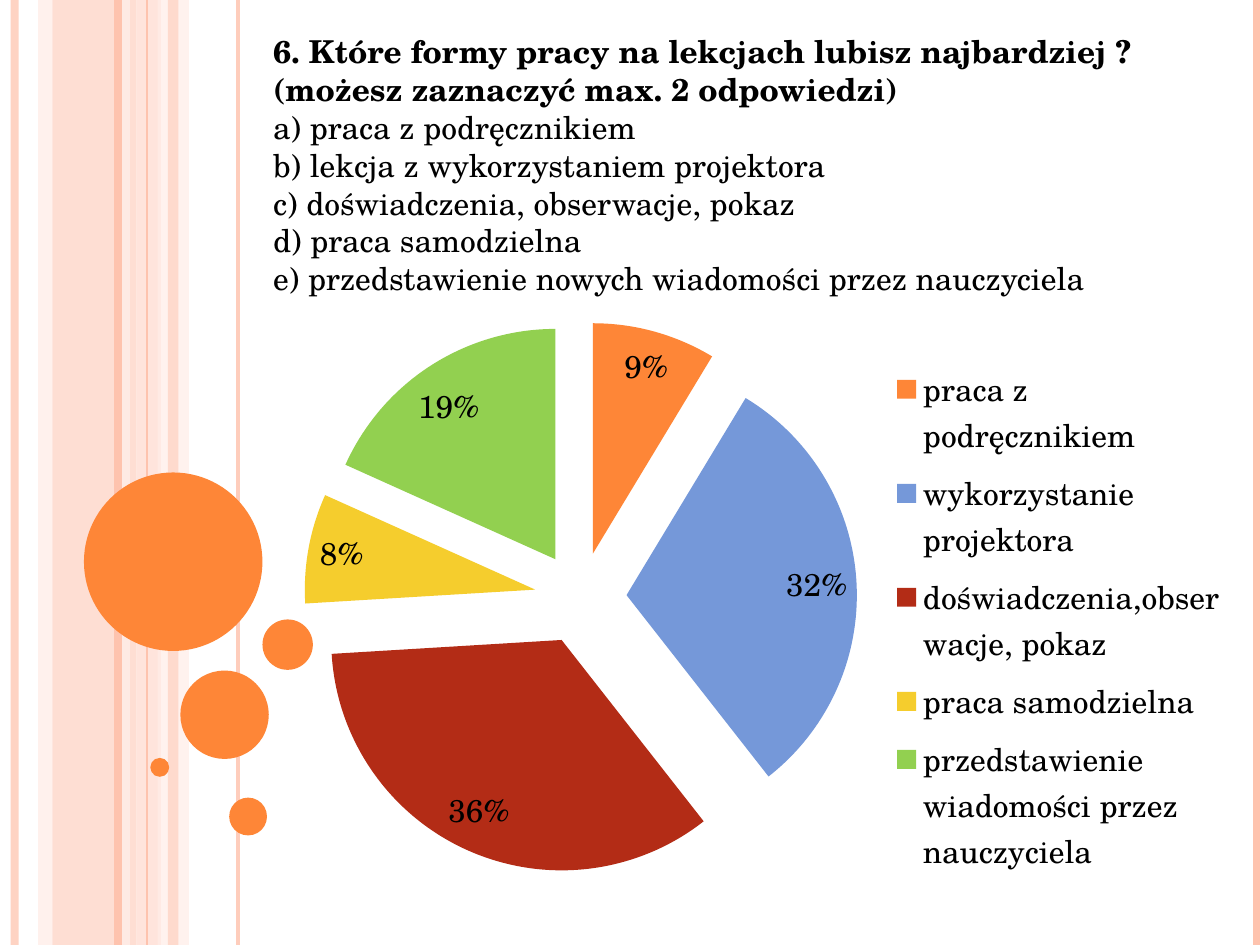
from dataclasses import dataclass

from lxml import etree
from pptx import Presentation
from pptx import util as u
from pptx.chart.data import CategoryChartData
from pptx.dml.color import RGBColor
from pptx.enum import chart as charts, shapes, text
from pptx.oxml.ns import qn

COLORS = {
    "peach": "FEC3AE", "blush": "FFD9CE", "pale": "FFEDE8", "orange": "FE8637",
    "blue": "7598D9", "red": "B32C16", "yellow": "F5CD2D", "green": "92D050",
    "black": "000000",
}
FONT = "TeX Gyre Schola"
TEXT_SIZE = u.Pt(18)
SLIDE_WIDTH, SLIDE_HEIGHT = 720, 540


@dataclass(frozen=True)
class Band:
    left: float
    width: float
    color: str
    opacity: int


@dataclass(frozen=True)
class Stripe:
    x: float
    weight: float
    color: str
    opacity: int = 100


@dataclass(frozen=True)
class Bubble:
    left: float
    top: float
    diameter: float


@dataclass(frozen=True)
class Slice:
    label: str
    share: float
    color: str


BANDS = [
    Band(30, 48, "peach", 54),
    Band(21.8, 8.2, "blush", 36),
    Band(78, 14, "blush", 70),
    Band(90, 18, "pale", 71),
]
STRIPES = [
    Stripe(8.4, 4.5, "peach", 73),
    Stripe(72, 4.5, "pale", 83),
    Stripe(67.2, 4.5, "peach"),
    Stripe(136, 2.25, "peach", 82),
    Stripe(84, 0.75, "peach"),
    Stripe(718, 4.5, "peach"),
]
FRONT_BAND = Band(96, 6, "peach", 51)
BUBBLES = [
    Bubble(48, 270, 102),
    Bubble(103.1, 383.2, 50.5),
    Bubble(85.9, 433.1, 10.8),
    Bubble(131, 455.8, 21.6),
    Bubble(150, 354, 28.8),
]
SLICES = [
    Slice("praca z podręcznikiem", 0.09, "orange"),
    Slice("wykorzystanie projektora", 0.32, "blue"),
    Slice("doświadczenia,obserwacje, pokaz", 0.36, "red"),
    Slice("praca samodzielna", 0.08, "yellow"),
    Slice("przedstawienie wiadomości przez nauczyciela", 0.19, "green"),
]
QUESTION = ("6. Które formy pracy na lekcjach lubisz najbardziej ?\n"
            "(możesz zaznaczyć max. 2 odpowiedzi)")
ANSWERS = [
    "a) praca z podręcznikiem",
    "b) lekcja z wykorzystaniem projektora",
    "c) doświadczenia, obserwacje, pokaz",
    "d) praca samodzielna",
    "e) przedstawienie nowych wiadomości przez nauczyciela",
]
PLOT_LAYOUT = {"layoutTarget": "inner", "xMode": "edge", "yMode": "edge",
               "x": 0.067, "y": 0.091, "w": 0.552, "h": 0.851}
LEGEND_LAYOUT = {"xMode": "edge", "yMode": "edge",
                 "x": 0.65, "y": 0.15, "w": 0.34, "h": 0.8}
EXPLOSION = 20


def rgb(name: str) -> RGBColor:
    return RGBColor.from_string(COLORS[name])


def set_opacity(shape, opacity: int) -> None:
    if opacity < 100:
        color = shape._element.spPr.find(".//" + qn("a:srgbClr"))
        etree.SubElement(color, qn("a:alpha"), val=str(opacity * 1000))


def style_font(font, bold: bool = False) -> None:
    font.name = FONT
    font.size = TEXT_SIZE
    font.bold = bold
    font.color.rgb = rgb("black")


def draw_filled(slide, kind, left: float, top: float, width: float, height: float,
                color: str, opacity: int = 100) -> None:
    shape = slide.shapes.add_shape(kind, u.Pt(left), u.Pt(top), u.Pt(width), u.Pt(height))
    shape.shadow.inherit = False
    shape.fill.solid()
    shape.fill.fore_color.rgb = rgb(color)
    shape.line.fill.background()
    set_opacity(shape, opacity)


def draw_band(slide, band: Band) -> None:
    draw_filled(slide, shapes.MSO_SHAPE.RECTANGLE, band.left, 0, band.width,
                SLIDE_HEIGHT, band.color, band.opacity)


def draw_stripe(slide, stripe: Stripe) -> None:
    connector = slide.shapes.add_connector(
        shapes.MSO_CONNECTOR.STRAIGHT, u.Pt(stripe.x), u.Pt(0),
        u.Pt(stripe.x), u.Pt(SLIDE_HEIGHT))
    connector.line.color.rgb = rgb(stripe.color)
    connector.line.width = u.Pt(stripe.weight)
    set_opacity(connector, stripe.opacity)
    etree.SubElement(connector._element.spPr, qn("a:effectLst"))


def draw_bubble(slide, bubble: Bubble) -> None:
    draw_filled(slide, shapes.MSO_SHAPE.OVAL, bubble.left, bubble.top,
                bubble.diameter, bubble.diameter, "orange")


def draw_question(slide) -> None:
    box = slide.shapes.add_textbox(u.Pt(149), u.Pt(15), u.Pt(561.6), u.Pt(181.4))
    frame = box.text_frame
    frame.word_wrap = True
    frame.vertical_anchor = text.MSO_ANCHOR.TOP
    for index, line in enumerate([QUESTION, *ANSWERS]):
        paragraph = frame.add_paragraph() if index else frame.paragraphs[0]
        paragraph.text = line
        for run in paragraph.runs:
            style_font(run.font, bold=index == 0)


def set_layout(parent, position: int, settings: dict) -> None:
    for existing in parent.findall(qn("c:layout")):
        parent.remove(existing)
    layout = etree.Element(qn("c:layout"))
    manual = etree.SubElement(layout, qn("c:manualLayout"))
    for tag, value in settings.items():
        etree.SubElement(manual, qn("c:" + tag), val=str(value))
    parent.insert(position, layout)


def draw_chart(slide) -> None:
    data = CategoryChartData(number_format="0%")
    data.categories = [part.label for part in SLICES]
    data.add_series("Series 1", [part.share for part in SLICES])
    chart = slide.shapes.add_chart(
        charts.XL_CHART_TYPE.PIE, u.Pt(135.4), u.Pt(145.4), u.Pt(572.4), u.Pt(380.2),
        data).chart
    style_font(chart.font)
    chart.has_title = False
    chart.has_legend = True
    legend = chart.legend
    legend.position = charts.XL_LEGEND_POSITION.RIGHT
    legend.include_in_layout = False
    style_font(legend.font)

    plot = chart.plots[0]
    plot.vary_by_categories = True
    plot.has_data_labels = True
    labels = plot.data_labels
    labels.show_value = True
    labels.show_percentage = False
    labels.number_format = "0%"
    labels.number_format_is_linked = False
    style_font(labels.font)

    series = plot.series[0]
    for index, part in enumerate(SLICES):
        fill = series.points[index].format.fill
        fill.solid()
        fill.fore_color.rgb = rgb(part.color)
    explosion = etree.Element(qn("c:explosion"), val=str(EXPLOSION))
    series._element.find(qn("c:dPt")).addprevious(explosion)

    chart_space = chart._chartSpace
    set_layout(chart_space.find(".//" + qn("c:plotArea")), 0, PLOT_LAYOUT)
    legend_element = chart_space.find(".//" + qn("c:legend"))
    legend_position = legend_element.find(qn("c:legendPos"))
    if legend_position is None:
        legend_position = etree.Element(qn("c:legendPos"), val="r")
        legend_element.insert(0, legend_position)
    set_layout(legend_element, 1, LEGEND_LAYOUT)


def main() -> None:
    presentation = Presentation()
    presentation.slide_width = u.Pt(SLIDE_WIDTH)
    presentation.slide_height = u.Pt(SLIDE_HEIGHT)
    slide = presentation.slides.add_slide(presentation.slide_layouts[6])
    for band in BANDS:
        draw_band(slide, band)
    for stripe in STRIPES:
        draw_stripe(slide, stripe)
    draw_band(slide, FRONT_BAND)
    for bubble in BUBBLES:
        draw_bubble(slide, bubble)
    draw_question(slide)
    draw_chart(slide)
    presentation.save("out.pptx")


if __name__ == "__main__":
    main()
